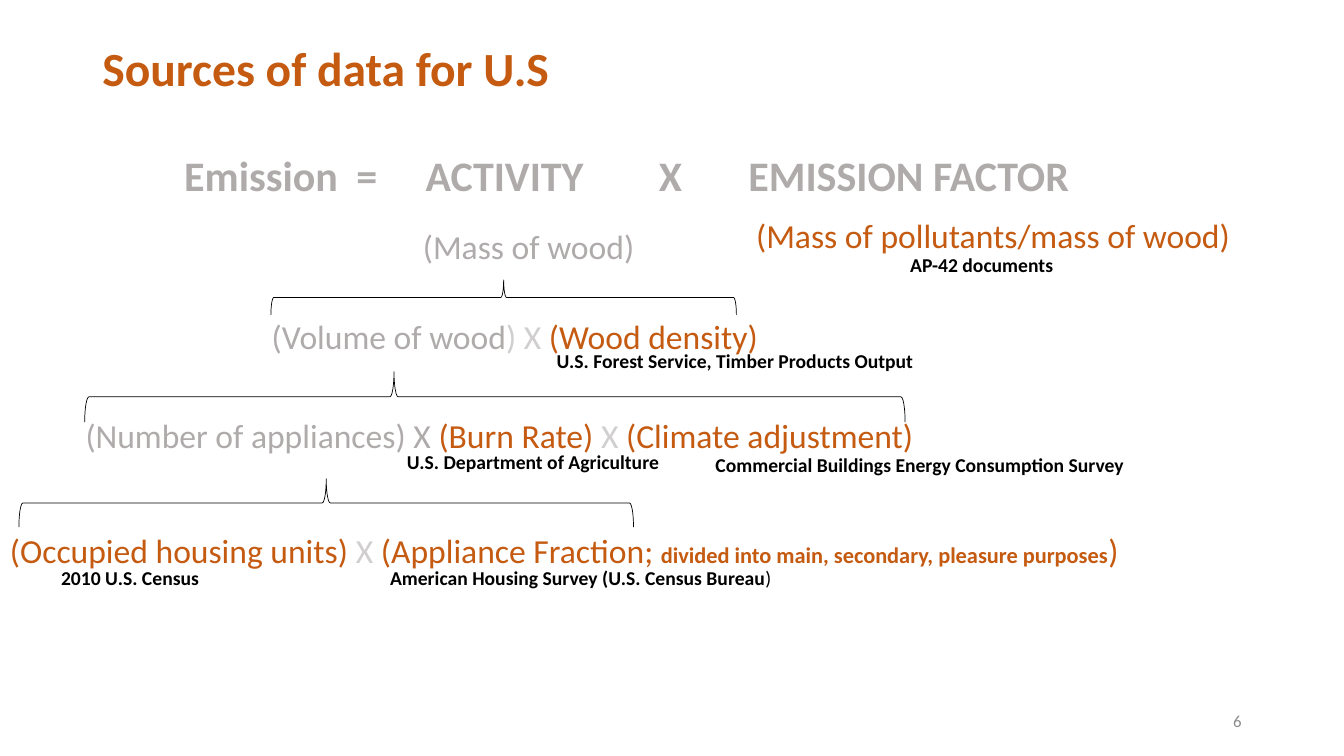
"""Build the slide on where the U.S. emission data come from."""
from dataclasses import dataclass
from pptx import Presentation
from pptx.dml.color import RGBColor as Rgb
from pptx.enum.shapes import MSO_SHAPE as Shape
from pptx.enum.text import MSO_ANCHOR as Anchor, MSO_AUTO_SIZE as Fit, PP_ALIGN as Align
from pptx.oxml.ns import qn
from pptx.util import Pt
from lxml.etree import SubElement as add_node


@dataclass(frozen=True)
class Theme:
    font: str = "Calibri"
    rust: str = "C55A11"
    gray: str = "AFABAB"
    pale: str = "D0CECE"
    dim: str = "8C8C8C"
    black: str = "000000"
    title: int = 34
    head: int = 30
    term: int = 24
    aside: int = 16
    note: int = 14
    foot: int = 12
    line: float = 0.5


def add_run(para, text, *, font, size, color, bold=False):
    run = para.add_run()
    run.text = text
    run.font.name = font
    run.font.size = Pt(size)
    run.font.bold = bold
    run.font.color.rgb = Rgb.from_string(color)


class Board:
    def __init__(self, slide, theme):
        self.slide = slide
        self.theme = theme

    def fill(self, frame, parts, size, align):
        para = frame.paragraphs[0]
        para.alignment = align
        for text, color, *rest in parts:
            style = {"size": size, "bold": False, **(rest[0] if rest else {})}
            add_run(para, text, font=self.theme.font, color=color, **style)
        return para

    def title(self, text, x, y, wide, high):
        shape = self.slide.shapes.title
        shape.left, shape.top, shape.width, shape.height = map(Pt, (x, y, wide, high))
        frame = shape.text_frame
        frame.auto_size = Fit.NONE
        frame.vertical_anchor = Anchor.TOP
        parts = [(text, self.theme.rust, {"bold": True})]
        para = self.fill(frame, parts, self.theme.title, Align.LEFT)
        para.line_spacing = 0.9

    def text(self, parts, x, y, wide, high, size, align=Align.LEFT, anchor=Anchor.TOP):
        box = self.slide.shapes.add_textbox(*map(Pt, (x, y, wide, high)))
        frame = box.text_frame
        frame.word_wrap = True
        frame.auto_size = Fit.NONE
        frame.vertical_anchor = anchor
        return self.fill(frame, parts, size, align)

    def head(self, words, stops, x, y, wide, high):
        parts = [("\t".join(words), self.theme.gray, {"bold": True})]
        para = self.text(parts, x, y, wide, high, self.theme.head)
        tabs = add_node(para._p.get_or_add_pPr(), qn("a:tabLst"))
        for stop in stops:
            add_node(tabs, qn("a:tab"), pos=str(int(Pt(stop))), algn="l")

    def term(self, parts, x, y, wide):
        self.text(parts, x, y, wide, 36, self.theme.term)

    def note(self, text, x, y, wide, align=Align.LEFT, tail=""):
        parts = [(text, self.theme.black, {"bold": True})]
        if tail:
            parts.append((tail, self.theme.black))
        self.text(parts, x, y, wide, 24.5, self.theme.note, align)

    def brace(self, x, y, wide, high, bend=None):
        left, top = x + (wide - high) / 2, y + (high - wide) / 2
        shape = self.slide.shapes.add_shape(
            Shape.LEFT_BRACE, *map(Pt, (left, top, high, wide)))
        shape.rotation = 90
        shape.shadow.inherit = False
        shape.fill.background()
        shape.line.color.rgb = Rgb.from_string(self.theme.black)
        shape.line.width = Pt(self.theme.line)
        for i, value in enumerate(bend or ()):
            shape.adjustments[i] = value


def main():
    deck = Presentation()
    deck.slide_width, deck.slide_height = Pt(960), Pt(540)
    look = Theme()
    rust, gray, pale = look.rust, look.gray, look.pale
    board = Board(deck.slides.add_slide(deck.slide_layouts[5]), look)

    board.title("Sources of data for U.S", 66, 29, 828, 60)
    board.head(["Emission", "=", "ACTIVITY", "X", "EMISSION FACTOR"],
               [123, 172.5, 339, 403], 124.5, 103, 711, 44)

    board.term([("(Mass of wood)", gray)], 295, 157.5, 191)
    board.term([("(Mass of pollutants/mass of wood)", rust)], 533, 150, 367)
    board.term([("(Volume of wood", gray), (") X ", pale),
                ("(Wood density)", rust)], 187, 222, 382)
    board.term([("(Number of appliances) X ", gray), ("(Burn Rate) ", rust),
                ("X ", pale), ("(Climate adjustment)", rust)], 54, 292.5, 677)
    board.term([("(Occupied housing units) ", rust), ("X ", pale),
                ("(Appliance Fraction; ", rust),
                ("divided into main, secondary, pleasure purposes", rust,
                 {"size": look.aside, "bold": True}), (")", rust)], 0, 375, 960)

    board.brace(193.5, 200, 332.5, 25)
    board.brace(60.5, 265.5, 586, 36, (0.083, 0.623))
    board.brace(13.5, 342, 439, 34.5)

    board.note("AP-42 documents", 594, 177, 214.5, Align.CENTER)
    board.note("U.S. Forest Service, Timber Products Output", 390.5, 246, 271.5)
    board.note("U.S. Department of Agriculture", 283.5, 317.5, 247.5)
    board.note("Commercial Buildings Energy Consumption Survey", 504, 320, 393)
    board.note("2010 U.S. Census", 36.5, 400.5, 178.5)
    board.note("American Housing Survey (U.S. Census Bureau", 271.5, 401, 292.5, tail=")")

    board.text([("6", look.dim)], 678, 500.5, 216, 29, look.foot,
               Align.RIGHT, Anchor.MIDDLE)
    deck.save("out.pptx")


if __name__ == "__main__":
    main()
